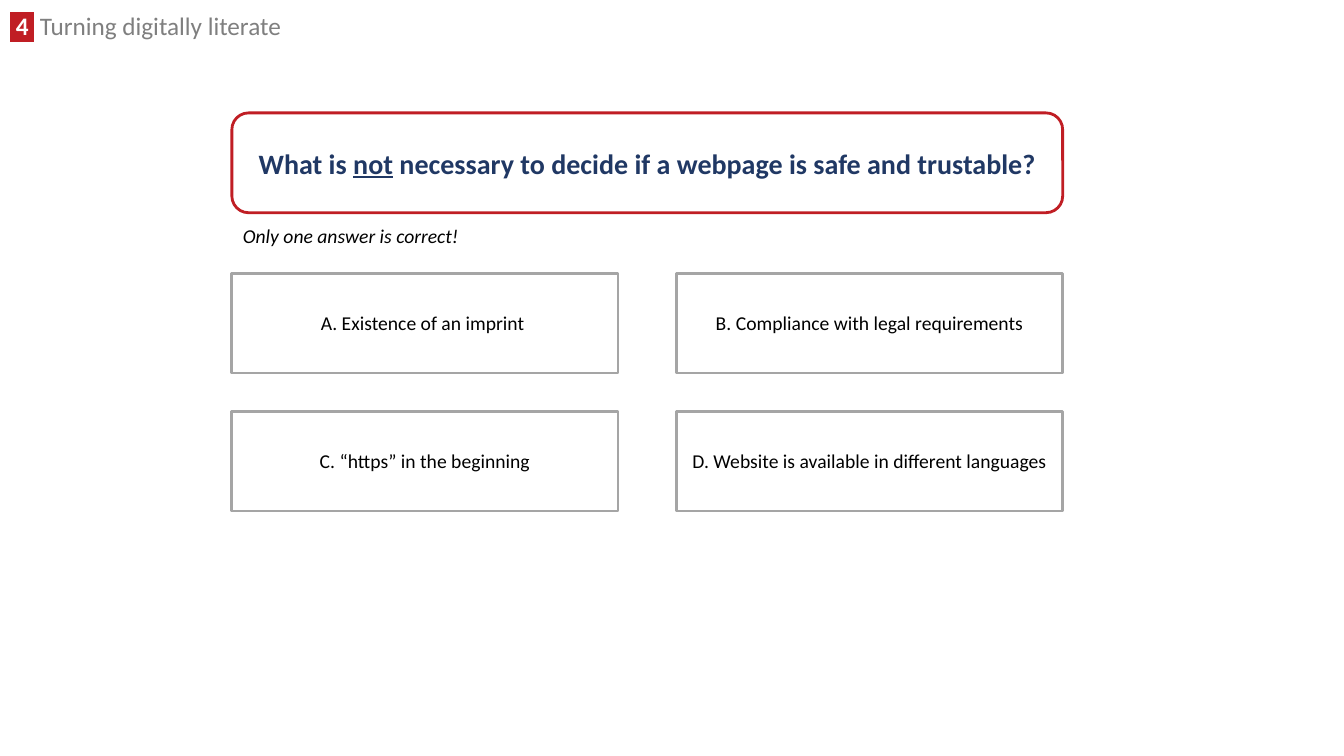
import pptx
import pptx.dml.color
import pptx.enum.shapes
import pptx.enum.text
import pptx.oxml
import pptx.oxml.ns
import pptx.util
from pptx.util import Inches

RED, NAVY, GRAY, BORDER, BLACK, WHITE = (
    "C01E24", "203864", "7F7F7F", "A5A5A5", "000000", "FFFFFF")
SHAPES = pptx.enum.shapes.MSO_SHAPE
ALIGN = pptx.enum.text.PP_ALIGN
ANCHOR = pptx.enum.text.MSO_ANCHOR
AUTO_SIZE = pptx.enum.text.MSO_AUTO_SIZE


def rgb(color):
    return pptx.dml.color.RGBColor.from_string(color)


def add_run(p, text, size=14, color=BLACK, bold=False, italic=False,
            underline=False, highlight=None):
    r = p.add_run()
    r.text = text
    r.font.name = "Calibri"
    r.font.size = pptx.util.Pt(size)
    r.font.bold = bold
    r.font.italic = italic
    r.font.underline = underline
    r.font.color.rgb = rgb(color)
    if highlight:
        fill = r.font._element.find(pptx.oxml.ns.qn("a:solidFill"))
        fill.addnext(pptx.oxml.parse_xml(
            f'<a:highlight {pptx.oxml.ns.nsdecls("a")}>'
            f'<a:srgbClr val="{highlight}"/></a:highlight>'))


def add_heading(s, number, text):
    title = s.shapes.title
    title.left, title.top = Inches(0), Inches(0.11)
    title.width, title.height = Inches(9.52), Inches(0.35)
    tf = title.text_frame
    tf.vertical_anchor = ANCHOR.TOP
    tf.auto_size = AUTO_SIZE.SHAPE_TO_FIT_TEXT
    p = tf.paragraphs[0]
    p.alignment = ALIGN.LEFT
    p.line_spacing = 0.8
    add_run(p, f" {number} ", size=18, color=WHITE, bold=True, highlight=RED)
    add_run(p, f" {text}", size=18, color=GRAY)


def add_box(s, kind, left, top, width, line):
    """Add an outlined white box and return its centred paragraph."""
    sp = s.shapes.add_shape(kind, Inches(left), Inches(top),
                            Inches(width), Inches(0.99))
    sp.shadow.inherit = False
    sp.fill.solid()
    sp.fill.fore_color.rgb = rgb(WHITE)
    sp.line.color.rgb = rgb(line)
    sp.line.width = pptx.util.Pt(2)
    tf = sp.text_frame
    tf.word_wrap = True
    tf.vertical_anchor = ANCHOR.MIDDLE
    p = tf.paragraphs[0]
    p.alignment = ALIGN.CENTER
    return p


def add_hint(s, text):
    sp = s.shapes.add_textbox(Inches(2.31), Inches(2.17),
                              Inches(2.36), Inches(0.34))
    tf = sp.text_frame
    tf.word_wrap = False
    tf.auto_size = AUTO_SIZE.SHAPE_TO_FIT_TEXT
    add_run(tf.paragraphs[0], text, italic=True)


def main():
    prs = pptx.Presentation()
    prs.slide_width, prs.slide_height = Inches(13.33), Inches(7.5)
    s = prs.slides.add_slide(prs.slide_layouts.get_by_name("Title Only"))
    add_heading(s, 4, "Turning digitally literate")

    question = add_box(s, SHAPES.ROUNDED_RECTANGLE, 2.3, 1.12, 8.24, RED)
    for text, underline in (
            ("What is ", False), ("not", True),
            (" necessary to decide if a webpage is safe and trustable?", False)):
        add_run(question, text, size=20, color=NAVY, bold=True,
                underline=underline)

    answers = ("A. Existence of an imprint ",
               "B. Compliance with legal requirements",
               "C. “https” in the beginning",
               "D. Website is available in different languages")
    for i, answer in enumerate(answers):
        row, col = divmod(i, 2)
        p = add_box(s, SHAPES.RECTANGLE, 2.3 + 4.41 * col,
                    2.71 + 1.37 * row, 3.83, BORDER)
        add_run(p, answer)

    add_hint(s, "Only one answer is correct!")
    prs.save("out.pptx")


if __name__ == "__main__":
    main()
